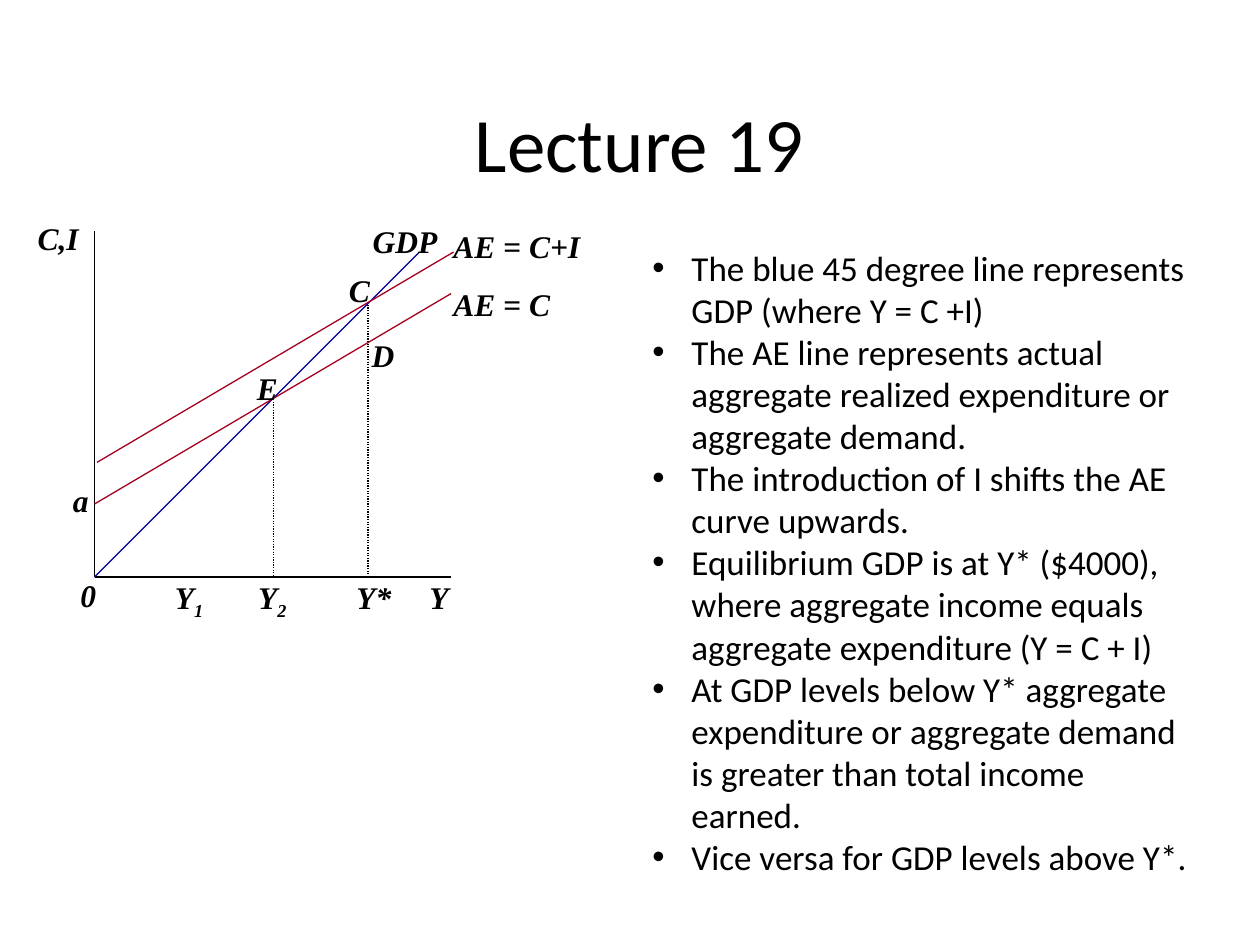
from pptx import Presentation
from pptx.dml.color import RGBColor
from pptx.enum.dml import MSO_LINE
from pptx.enum.shapes import MSO_CONNECTOR
from pptx.enum.text import MSO_ANCHOR, PP_ALIGN
from pptx.oxml.ns import qn
from pptx.util import Inches, Pt
from lxml.etree import SubElement

BLACK, BLUE, RED = "000000", "000099", "A50021"
ORIGIN_X, AXIS_Y, AXIS_END = 0.75, 4.58, 3.58

LINES = [
    ((ORIGIN_X, AXIS_Y), (AXIS_END, AXIS_Y), BLACK, None),
    ((ORIGIN_X, AXIS_Y), (ORIGIN_X, 1.83), BLACK, None),
    ((ORIGIN_X, AXIS_Y), (3.33, 2), BLUE, None),
    ((ORIGIN_X, 4), (AXIS_END, 2.33), RED, None),
    ((0.77, 3.67), (3.6, 2), RED, None),
    ((2.17, 3.19), (2.17, AXIS_Y), BLACK, MSO_LINE.ROUND_DOT),
    ((2.92, 2.42), (2.92, AXIS_Y), BLACK, MSO_LINE.ROUND_DOT),
]

LABELS = [
    ("C,I", "", 0.2, 1.69, 0.53),
    ("GDP", "", 2.86, 1.71, 0.72),
    ("AE = C+I", "", 3.5, 1.75, 1.22),
    ("AE = C", "", 3.5, 2.21, 0.98),
    ("C", "", 2.67, 2.1, 0.37),
    ("D", "", 2.85, 2.62, 0.38),
    ("E", "", 1.94, 2.88, 0.37),
    ("a", "", 0.48, 3.77, 0.33),
    ("0", "", 0.54, 4.52, 0.33),
    ("Y", "1", 1.29, 4.54, 0.43),
    ("Y", "2", 1.95, 4.54, 0.43),
    ("Y*", "", 2.73, 4.54, 0.48),
    ("Y", "", 3.31, 4.54, 0.35),
]

POINTS = [
    "The blue 45 degree line represents GDP (where Y = C +I)",
    "The AE line represents actual aggregate realized expenditure or aggregate demand.",
    "The introduction of I shifts the AE curve upwards.",
    "Equilibrium GDP is at Y* ($4000), where aggregate income equals aggregate expenditure (Y = C + I)",
    "At GDP levels below Y* aggregate expenditure or aggregate demand is greater than total income earned.",
    "Vice versa for GDP levels above Y*.",
]


def color(hex_value):
    """Turn a hex string into a colour."""
    return RGBColor.from_string(hex_value)


def add_box(page, left, top, width, height, wrap=True):
    """Add an empty text box and return it."""
    box = page.shapes.add_textbox(Inches(left), Inches(top), Inches(width), Inches(height))
    box.text_frame.word_wrap = wrap
    return box


def add_span(para, text, size=18, font="Calibri", bold=False, italic=False, baseline=None):
    """Add a formatted run to a paragraph."""
    span = para.add_run()
    span.text = text
    span.font.size = Pt(size)
    span.font.name = font
    span.font.bold = bold
    span.font.italic = italic
    span.font.color.rgb = color(BLACK)
    if baseline:
        span._r.get_or_add_rPr().set("baseline", str(baseline))


def add_line(page, start, end, hex_value, dash):
    """Draw a thin straight line without a shadow."""
    line = page.shapes.add_connector(MSO_CONNECTOR.STRAIGHT, *map(Inches, start + end))
    line.line.color.rgb = color(hex_value)
    line.line.width = Pt(0.75)
    if dash:
        line.line.dash_style = dash
    SubElement(line._element.spPr, qn("a:effectLst"))


def add_label(page, text, subscript, left, top, width):
    """Add a diagram label with an optional subscript."""
    box = add_box(page, left, top, width, 0.4, wrap=False)
    para = box.text_frame.paragraphs[0]
    style = {"font": "Times New Roman", "bold": True, "italic": True}
    add_span(para, text, **style)
    if subscript:
        add_span(para, subscript, baseline=-25000, **style)


def add_title(page, text):
    """Add the centred slide title."""
    frame = add_box(page, 0.75, 0.5, 8.5, 1.25).text_frame
    frame.vertical_anchor = MSO_ANCHOR.MIDDLE
    frame.margin_left = Inches(0.25)
    frame.paragraphs[0].alignment = PP_ALIGN.CENTER
    add_span(frame.paragraphs[0], text, size=44)


def add_bullets(page, points):
    """Add the bulleted explanation."""
    frame = add_box(page, 5.08, 1.91, 4.5, 5.49).text_frame
    for index, point in enumerate(points):
        para = frame.add_paragraph() if index else frame.paragraphs[0]
        add_span(para, point, size=20)
        properties = para._p.get_or_add_pPr()
        properties.set("marL", str(Inches(0.31)))
        properties.set("indent", str(-Inches(0.31)))
        SubElement(properties, qn("a:buFont"), typeface="Arial")
        SubElement(properties, qn("a:buChar"), char="•")


def main():
    """Build the lecture slide and save it."""
    deck = Presentation()
    deck.slide_width, deck.slide_height = Inches(10), Inches(7.5)
    page = deck.slides.add_slide(deck.slide_layouts[6])
    add_title(page, "Lecture 19")
    for line in LINES:
        add_line(page, *line)
    for label in LABELS:
        add_label(page, *label)
    add_bullets(page, POINTS)
    deck.save("out.pptx")


if __name__ == "__main__":
    main()
